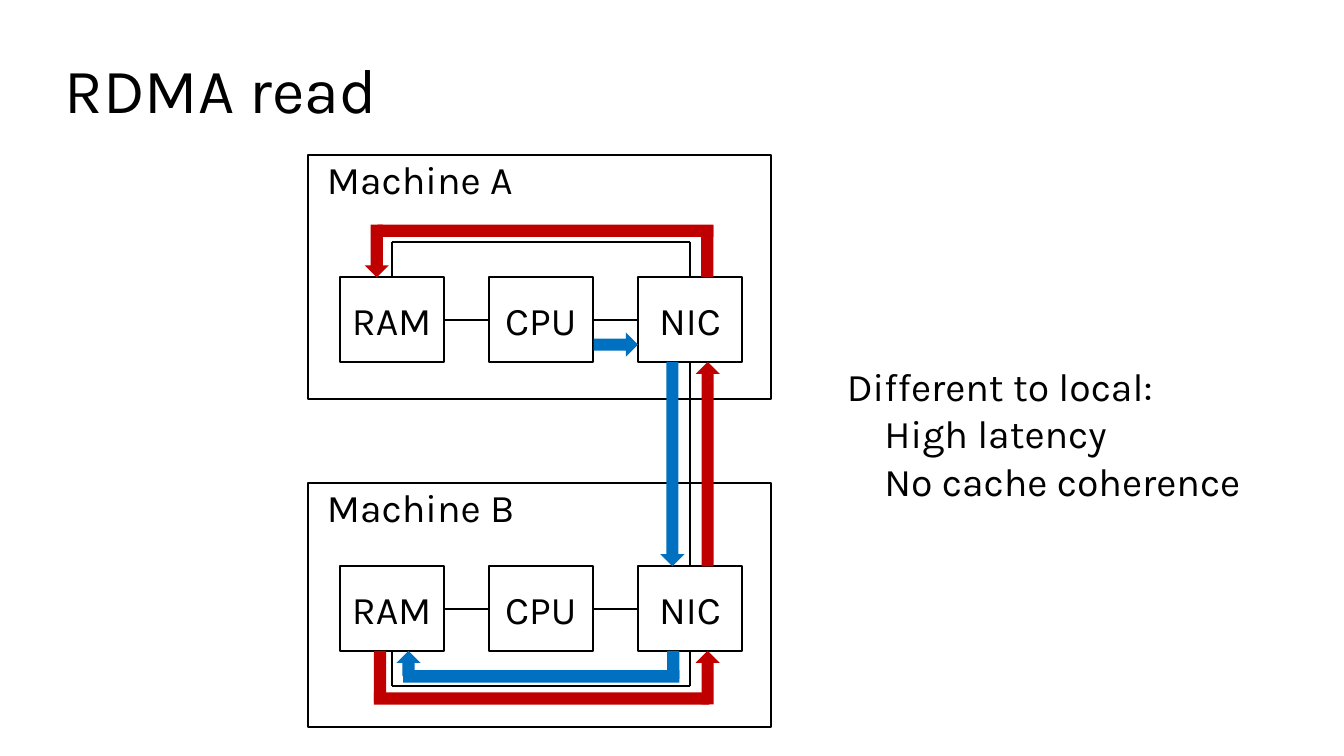
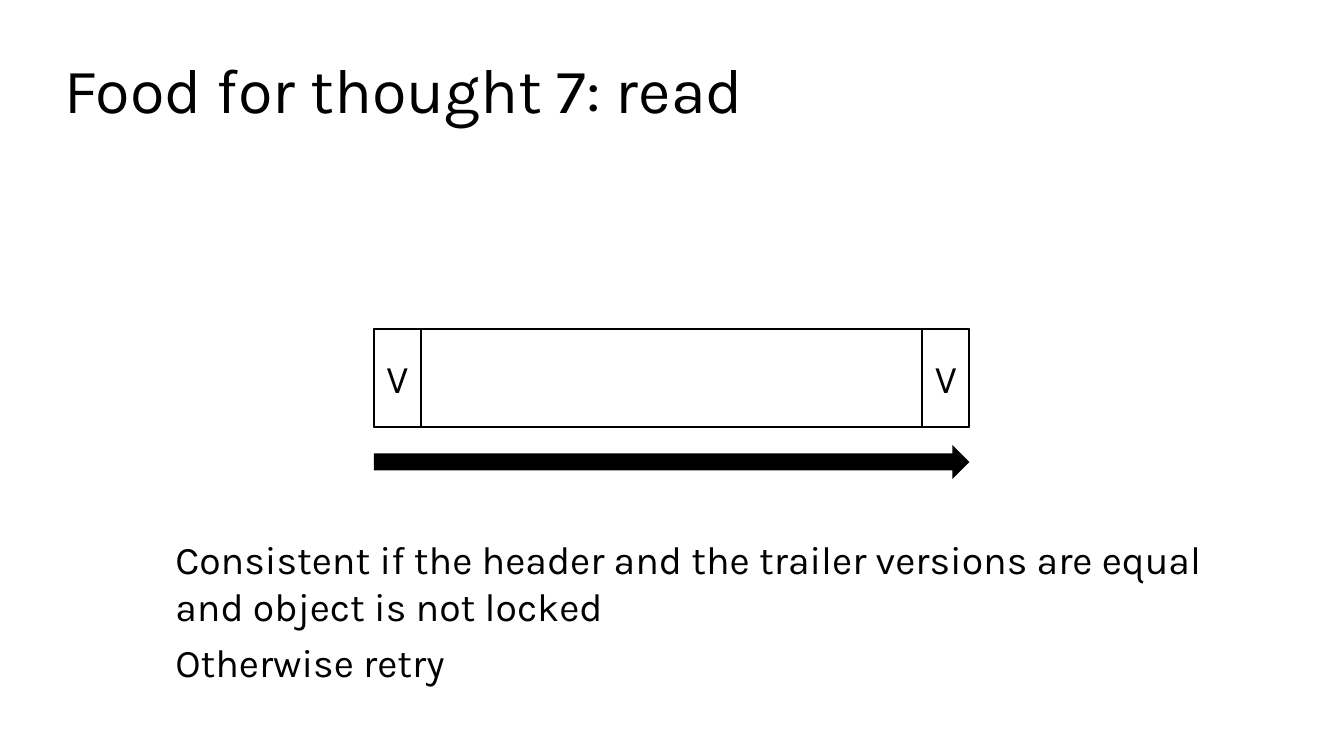
from dataclasses import dataclass

from pptx import Presentation
from pptx import util as u
from pptx.dml.color import RGBColor
from pptx.enum import shapes, text
from pptx.oxml.ns import qn

BLACK = RGBColor(0x00, 0x00, 0x00)
BLUE = RGBColor(0x00, 0x70, 0xC0)
RED = RGBColor(0xC0, 0x00, 0x00)
FONT = "Karla"
TITLE_SIZE = u.Pt(45)
BODY_SIZE = u.Pt(28)
LINE_WIDTH = u.Pt(1.5)

Kind = shapes.MSO_SHAPE
LEFT, CENTER = text.PP_ALIGN.LEFT, text.PP_ALIGN.CENTER
TOP, MIDDLE = text.MSO_ANCHOR.TOP, text.MSO_ANCHOR.MIDDLE

MACHINE_LEFT, MACHINE_WIDTH, MACHINE_HEIGHT = 7.77, 11.66, 6.15
PART_NAMES = ("RAM", "CPU", "NIC")
PART_LEFT, PART_PITCH, PART_WIDTH, PART_HEIGHT = 8.56, 3.76, 2.62, 2.13
BUS_GAP = 0.89
SHAFT, HEAD = 0.31, 0.61


@dataclass(frozen=True)
class Area:
    left: float
    top: float
    width: float
    height: float

    def lengths(self) -> list[u.Length]:
        return [u.Cm(n) for n in (self.left, self.top, self.width, self.height)]


@dataclass(frozen=True)
class Machine:
    name: str
    top: float
    parts_top: float
    bus_above: bool

    @property
    def parts_bottom(self) -> float:
        return self.parts_top + PART_HEIGHT


@dataclass(frozen=True)
class Flow:
    kind: Kind
    colour: RGBColor
    area: Area


@dataclass(frozen=True)
class Line:
    wording: str
    indent: float = 0


MACHINE_A = Machine("Machine A", 3.91, 6.99, True)
MACHINE_B = Machine("Machine B", 12.17, 14.27, False)
LINK_TOP = MACHINE_A.parts_bottom
LINK_LENGTH = MACHINE_B.parts_top - LINK_TOP
UNDER_B = MACHINE_B.parts_bottom

FLOWS = (
    Flow(Kind.RIGHT_ARROW, BLUE, Area(14.96, 8.38, 1.12, HEAD)),
    Flow(Kind.DOWN_ARROW, BLUE, Area(16.64, LINK_TOP, HEAD, LINK_LENGTH)),
    Flow(Kind.UP_ARROW, BLUE, Area(9.99, UNDER_B, HEAD, 0.64)),
    Flow(Kind.RECTANGLE, BLUE, Area(10.16, 16.89, 6.96, SHAFT)),
    Flow(Kind.RECTANGLE, BLUE, Area(16.81, UNDER_B, SHAFT, 0.71)),
    Flow(Kind.UP_ARROW, RED, Area(17.53, LINK_TOP, HEAD, LINK_LENGTH)),
    Flow(Kind.RECTANGLE, RED, Area(9.42, 17.45, 8.46, SHAFT)),
    Flow(Kind.RECTANGLE, RED, Area(9.42, UNDER_B, SHAFT, 1.3)),
    Flow(Kind.UP_ARROW, RED, Area(17.53, UNDER_B, HEAD, 1.35)),
    Flow(Kind.RECTANGLE, RED, Area(9.52, 5.66, 8.46, SHAFT)),
    Flow(Kind.RECTANGLE, RED, Area(17.67, 5.68, SHAFT, 1.3)),
    Flow(Kind.DOWN_ARROW, RED, Area(9.19, 5.66, HEAD, 1.33)),
)

RECORD = Area(9.42, 8.28, 15.01, 2.49)
VERSION_WIDTH = 1.19


def apply(target, values: dict) -> None:
    for name, value in values.items():
        setattr(target, name, value)


def write(box, lines: tuple[Line, ...], size=BODY_SIZE, align=LEFT,
          anchor=TOP, margin: float = 0) -> None:
    frame = box.text_frame
    apply(frame, {
        "word_wrap": True, "vertical_anchor": anchor,
        "margin_left": u.Cm(margin), "margin_right": 0,
        "margin_top": 0, "margin_bottom": 0,
    })
    for index, line in enumerate(lines):
        para = frame.add_paragraph() if index else frame.paragraphs[0]
        para.alignment = align
        if line.indent:
            para._p.get_or_add_pPr().set("marL", str(u.Cm(line.indent)))
        span = para.add_run()
        span.text = line.wording
        apply(span.font, {"name": FONT, "size": size})
        span.font.color.rgb = BLACK


def add_text(page, area: Area, *lines: Line, size=BODY_SIZE) -> None:
    write(page.shapes.add_textbox(*area.lengths()), lines, size)


def add_frame(page, area: Area, label: str = "", **layout) -> None:
    box = page.shapes.add_shape(Kind.RECTANGLE, *area.lengths())
    box.shadow.inherit = False
    box.fill.background()
    box.line.color.rgb = BLACK
    box.line.width = LINE_WIDTH
    if label:
        write(box, (Line(label),), **layout)


def add_flow(page, flow: Flow) -> None:
    box = page.shapes.add_shape(flow.kind, *flow.area.lengths())
    box.shadow.inherit = False
    box.fill.solid()
    box.fill.fore_color.rgb = flow.colour
    box.line.fill.background()


def add_wire(page, x1: float, y1: float, x2: float, y2: float) -> None:
    ends = [u.Cm(n) for n in (x1, y1, x2, y2)]
    wire = page.shapes.add_connector(shapes.MSO_CONNECTOR.STRAIGHT, *ends)
    wire.line.color.rgb = BLACK
    wire.line.width = LINE_WIDTH
    properties = wire._element.spPr
    properties.append(properties.makeelement(qn("a:effectLst"), {}))


def add_machine(page, machine: Machine) -> None:
    add_frame(page, Area(MACHINE_LEFT, machine.top, MACHINE_WIDTH, MACHINE_HEIGHT),
              machine.name, margin=0.47)
    lefts = [PART_LEFT + PART_PITCH * index for index in range(len(PART_NAMES))]
    for name, left in zip(PART_NAMES, lefts):
        add_frame(page, Area(left, machine.parts_top, PART_WIDTH, PART_HEIGHT),
                  name, align=CENTER, anchor=MIDDLE)
    middle = machine.parts_top + PART_HEIGHT / 2
    for left, following in zip(lefts, lefts[1:]):
        add_wire(page, left + PART_WIDTH, middle, following, middle)
    if machine.bus_above:
        edge, bus = machine.parts_top, machine.parts_top - BUS_GAP
    else:
        edge, bus = machine.parts_bottom, machine.parts_bottom + BUS_GAP
    ram, nic = (left + PART_WIDTH / 2 for left in (lefts[0], lefts[-1]))
    for x in (ram, nic):
        add_wire(page, x, edge, x, bus)
    add_wire(page, ram, bus, nic, bus)


def add_page(deck, title: str):
    page = deck.slides.add_slide(deck.slide_layouts[6])
    add_text(page, Area(1.63, 1.27, 30.61, 1.93), Line(title), size=TITLE_SIZE)
    return page


def add_rdma_page(deck) -> None:
    page = add_page(deck, "RDMA read")
    for machine in (MACHINE_A, MACHINE_B):
        add_machine(page, machine)
    nic = PART_LEFT + 2 * PART_PITCH + PART_WIDTH / 2
    add_wire(page, nic, LINK_TOP, nic, MACHINE_B.parts_top)
    for flow in FLOWS:
        add_flow(page, flow)
    add_text(page, Area(21.34, 9.14, 11, 3.58), Line("Different to local:"),
             Line("High latency", 0.95), Line("No cache coherence", 0.95))


def add_thought_page(deck) -> None:
    page = add_page(deck, "Food for thought 7: read")
    add_frame(page, RECORD)
    for left in (RECORD.left, RECORD.left + RECORD.width - VERSION_WIDTH):
        add_frame(page, Area(left, RECORD.top, VERSION_WIDTH, RECORD.height),
                  "V", align=CENTER, anchor=MIDDLE)
    add_flow(page, Flow(Kind.RIGHT_ARROW, BLACK,
                        Area(RECORD.left, 11.21, RECORD.width, 0.86)))
    add_text(page, Area(4.42, 13.49, 27, 2.39),
             Line("Consistent if the header and the trailer versions are equal"),
             Line("and object is not locked"))
    add_text(page, Area(4.42, 16.08, 8, 1.19), Line("Otherwise retry"))


def main() -> None:
    deck = Presentation()
    apply(deck, {"slide_width": u.Cm(33.87), "slide_height": u.Cm(19.05)})
    add_rdma_page(deck)
    add_thought_page(deck)
    deck.save("out.pptx")


if __name__ == "__main__":
    main()
